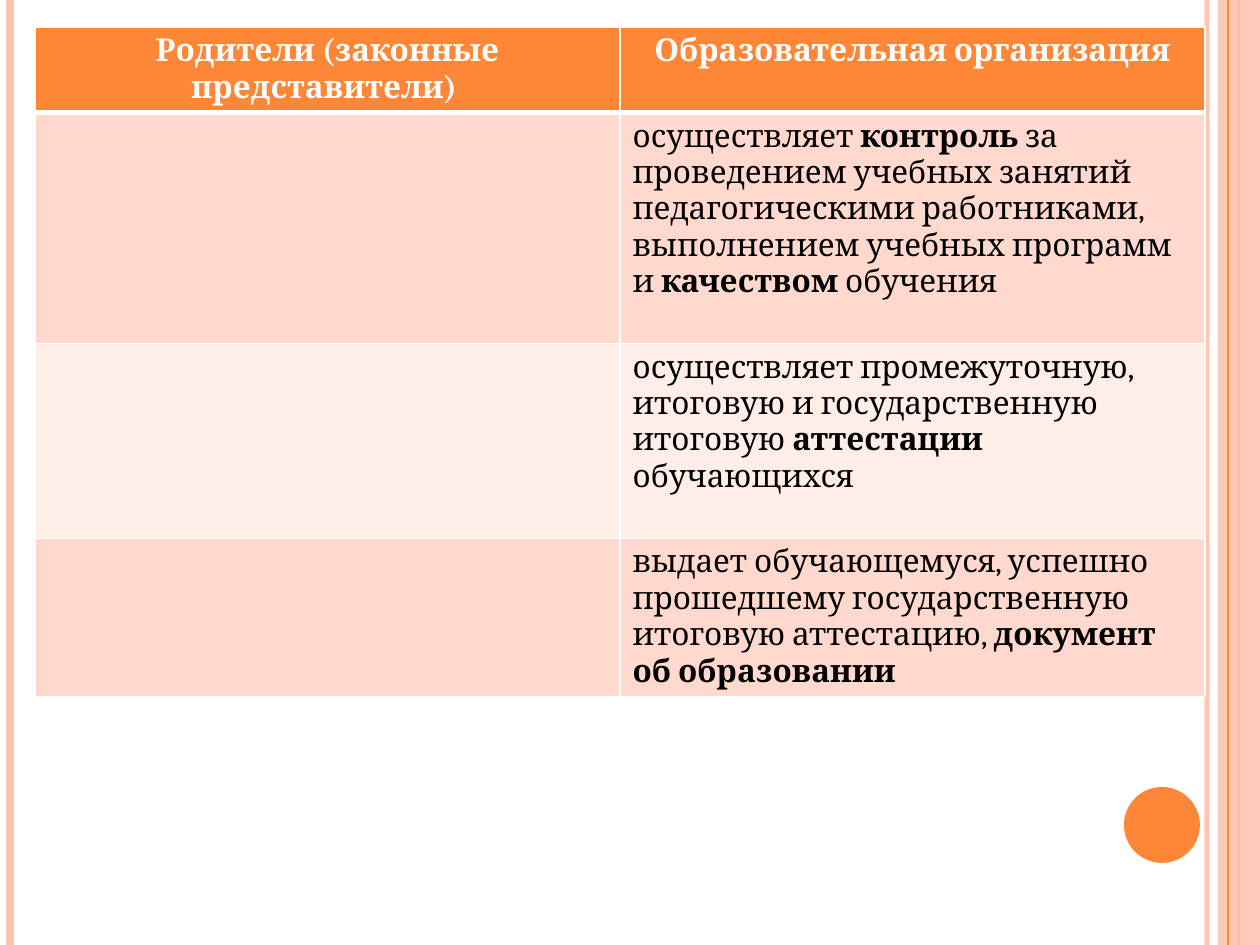
from lxml.etree import SubElement
from pptx import Presentation
from pptx.dml.color import RGBColor
from pptx.enum.shapes import MSO_CONNECTOR as CONNECTOR, MSO_SHAPE as SHAPE
from pptx.enum.text import PP_ALIGN as ALIGN
from pptx.oxml import parse_xml
from pptx.oxml.ns import nsdecls, qn
from pptx.util import Pt

PX = 914400 // 126
WIDTH, HEIGHT = 1260, 945
COLORS = {
    "orange": "FE8637",
    "peach": "FEC3AE",
    "row_dark": "FFD9CE",
    "row_light": "FFEDE8",
    "white": "FFFFFF",
    "black": "000000",
}


def rgb(name):
    return RGBColor.from_string(COLORS[name])


def set_alpha(fill_parent, percent):
    color = fill_parent.find(".//" + qn("a:srgbClr"))
    SubElement(color, qn("a:alpha")).set("val", str(percent * 1000))


prs = Presentation()
prs.slide_width, prs.slide_height = WIDTH * PX, HEIGHT * PX
slide = prs.slides.add_slide(prs.slide_layouts[6])
shapes = slide.shapes

# Side stripes: x, colour, points, opacity; the band lies below the last one
stripes = [
    (1207, "peach", 3, 93),
    (10, "peach", 4.5, 100),
    (1239, "orange", 1.5, 100),
    (1228, "orange", 0.75, 100),
]
for x, color, points, opacity in stripes:
    if x == 1228:
        band = shapes.add_shape(SHAPE.RECTANGLE, 1218 * PX, 0, 42 * PX, HEIGHT * PX)
        band.shadow.inherit = False
        band.fill.solid()
        band.fill.fore_color.rgb = rgb("peach")
        band.line.fill.background()
        set_alpha(band._element.spPr, 87)
    stripe = shapes.add_connector(CONNECTOR.STRAIGHT, x * PX, 0, x * PX, HEIGHT * PX)
    stripe.line.color.rgb = rgb(color)
    stripe.line.width = Pt(points)
    if opacity < 100:
        set_alpha(stripe._element.spPr, opacity)
    SubElement(stripe._element.spPr, qn("a:effectLst"))

# Corner circle
circle = shapes.add_shape(SHAPE.OVAL, 1124 * PX, 787 * PX, 76 * PX, 76 * PX)
circle.shadow.inherit = False
circle.fill.solid()
circle.fill.fore_color.rgb = rgb("orange")
circle.line.fill.background()

# Table content: each cell is a list of (text, bold) runs
rows = [
    (84, "orange", [("Родители (законные представители) ", True)],
     [("Образовательная организация", True)]),
    (231, "row_dark", [],
     [("осуществляет ", False), ("контроль", True),
      (" за проведением учебных занятий педагогическими работниками, "
       "выполнением учебных программ и ", False),
      ("качеством ", True), ("обучения", False)]),
    (195, "row_light", [],
     [("осуществляет промежуточную, итоговую и государственную итоговую ", False),
      ("аттестации", True), (" обучающихся", False)]),
    (157, "row_dark", [],
     [("выдает обучающемуся, успешно прошедшему государственную "
       "итоговую аттестацию, ", False),
      ("документ об образовании", True)]),
]
duties = shapes.add_table(len(rows), 2, 35 * PX, 27 * PX, 1170 * PX,
                          sum(row[0] for row in rows) * PX).table
for column in duties.columns:
    column.width = 585 * PX

for r, (height, fill, *cells) in enumerate(rows):
    duties.rows[r].height = height * PX
    for c, runs in enumerate(cells):
        cell = duties.cell(r, c)
        cell.fill.solid()
        cell.fill.fore_color.rgb = rgb(fill)

        # Borders, with a thick rule under the header
        widths = {"L": 1, "R": 1, "T": 3 if r == 1 else 1, "B": 3 if r == 0 else 1}
        for position, (side, points) in enumerate(widths.items()):
            border = parse_xml(
                f'<a:ln{side} {nsdecls("a")} w="{Pt(points)}"><a:solidFill>'
                f'<a:srgbClr val="{COLORS["white"]}"/></a:solidFill></a:ln{side}>')
            cell._tc.get_or_add_tcPr().insert(position, border)

        paragraph = cell.text_frame.paragraphs[0]
        paragraph.alignment = ALIGN.CENTER if r == 0 else ALIGN.LEFT
        for text, bold in runs:
            run = paragraph.add_run()
            run.text = text
            run.font.name = "Cambria"
            run.font.size = Pt(18)
            run.font.bold = bold
            run.font.color.rgb = rgb("white" if r == 0 else "black")

prs.save("out.pptx")
